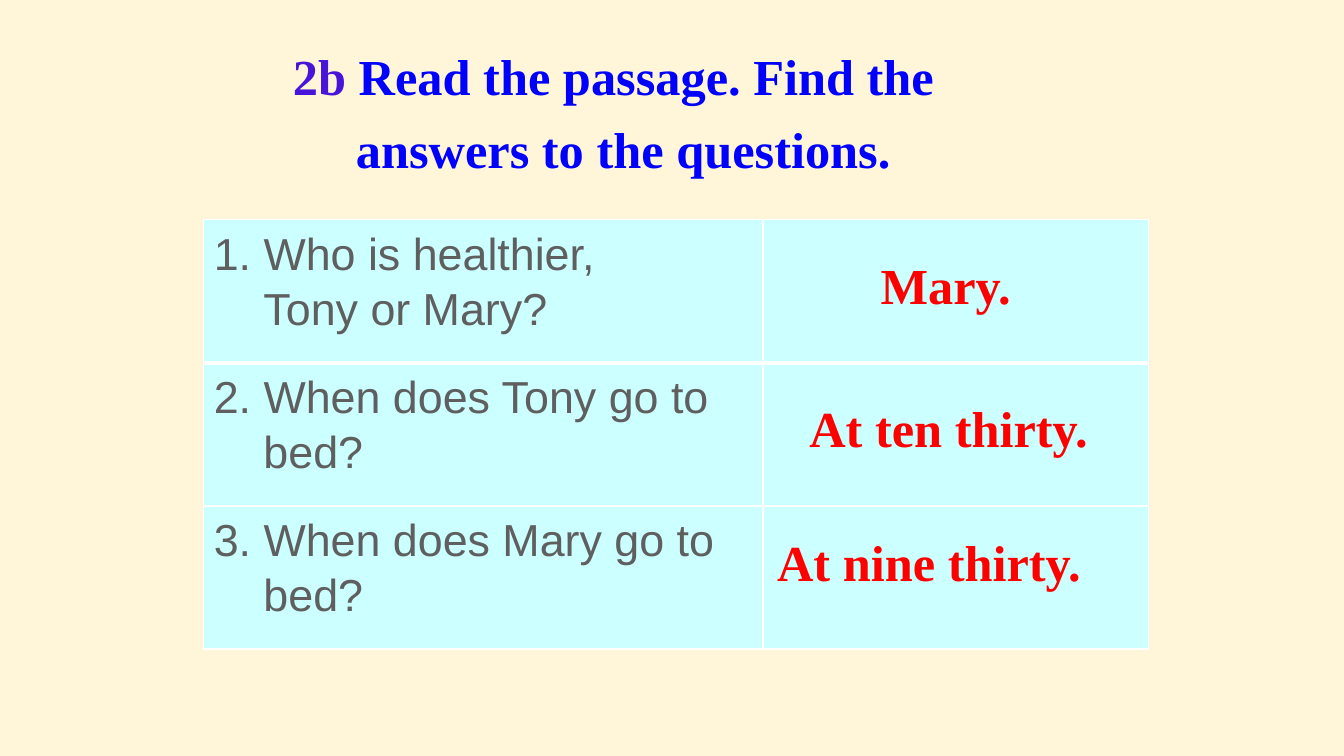
from lxml import etree
from pptx import Presentation
from pptx.dml.color import RGBColor
from pptx.enum import text
from pptx.oxml import ns
from pptx.util import Pt

COLORS = {
    "background": "FFF5D8",
    "cell": "CCFFFF",
    "border": "FFFFFF",
    "question": "5F5F5F",
    "answer": "FF0000",
    "number": "4814DA",
    "title": "0000FF",
}
QUESTIONS = [
    ("1. Who is healthier,", "Tony or Mary?"),
    ("2. When does Tony go to", "bed?"),
    ("3. When does Mary go to", "bed?"),
]
ANSWERS = [
    ("Mary.", 622, 173.5, 136),
    ("At ten thirty.", 571, 275.8, 221),
    ("At nine thirty.", 548, 371.5, 255),
]


def color(name):
    return RGBColor.from_string(COLORS[name])


def style_run(run, name, size, color_name, bold):
    run.font.name = name
    run.font.size = Pt(size)
    run.font.bold = bold
    run.font.color.rgb = color(color_name)


def set_margin(paragraph, points):
    paragraph._p.get_or_add_pPr().set("marL", str(Pt(points)))


def set_borders(cell, widths):
    properties = cell._tc.get_or_add_tcPr()
    for position, (side, width) in enumerate(widths.items()):
        line = etree.Element(ns.qn(f"a:ln{side}"), w=str(Pt(width)))
        fill = etree.SubElement(line, ns.qn("a:solidFill"))
        etree.SubElement(fill, ns.qn("a:srgbClr"), val=COLORS["border"])
        properties.insert(position, line)


def add_title(slide, left, top, width, height):
    title = slide.shapes.title
    title.left, title.top, title.width, title.height = (
        Pt(left), Pt(top), Pt(width), Pt(height))
    frame = title.text_frame
    frame.text = "2b \nanswers to the questions."
    frame.word_wrap = True
    frame.auto_size = text.MSO_AUTO_SIZE.NONE
    frame.vertical_anchor = text.MSO_ANCHOR.TOP
    first, second = frame.paragraphs
    first.add_run().text = "Read the passage. Find the"
    set_margin(second, 45)
    for paragraph in frame.paragraphs:
        paragraph.alignment = text.PP_ALIGN.LEFT
        paragraph.line_spacing = 1.2
        paragraph.space_before = Pt(0)
        for run in paragraph.runs:
            style_run(run, "Times New Roman", 36, "title", True)
    first.runs[0].font.color.rgb = color("number")


def add_questions(slide, left, top, width, height):
    table = slide.shapes.add_table(
        len(QUESTIONS), 2, Pt(left), Pt(top), Pt(width), Pt(height)).table
    table.first_row = False
    table.horz_banding = False
    question_width = 399.5
    table.columns[0].width = Pt(question_width)
    table.columns[1].width = Pt(width - question_width)
    for index, lines in enumerate(QUESTIONS):
        widths = {"L": 1, "R": 1, "T": 3 if index == 1 else 1,
                  "B": 3 if index == 0 else 1}
        for cell in table.rows[index].cells:
            cell.fill.solid()
            cell.fill.fore_color.rgb = color("cell")
            set_borders(cell, widths)
        frame = table.cell(index, 0).text_frame
        frame.text = "\n".join(lines)
        set_margin(frame.paragraphs[1], 35.5)
        for paragraph in frame.paragraphs:
            paragraph.line_spacing = 1.1
            style_run(paragraph.runs[0], "Arial", 32, "question", False)


def add_answer(slide, answer, left, top, width, height):
    box = slide.shapes.add_textbox(Pt(left), Pt(top), Pt(width), Pt(height))
    frame = box.text_frame
    frame.text = answer
    frame.word_wrap = True
    paragraph = frame.paragraphs[0]
    paragraph.line_spacing = 1.1
    style_run(paragraph.runs[0], "Times New Roman", 36, "answer", True)


def main():
    presentation = Presentation()
    presentation.slide_width = Pt(960)
    presentation.slide_height = Pt(540)
    slide = presentation.slides.add_slide(presentation.slide_layouts[5])
    slide.background.fill.solid()
    slide.background.fill.fore_color.rgb = color("background")
    add_title(slide, 202, 20, 539, 111)
    add_questions(slide, 145.5, 157, 675, 306.6)
    for answer, left, top, width in ANSWERS:
        add_answer(slide, answer, left, top, width, 55)
    presentation.save("out.pptx")


if __name__ == "__main__":
    main()
